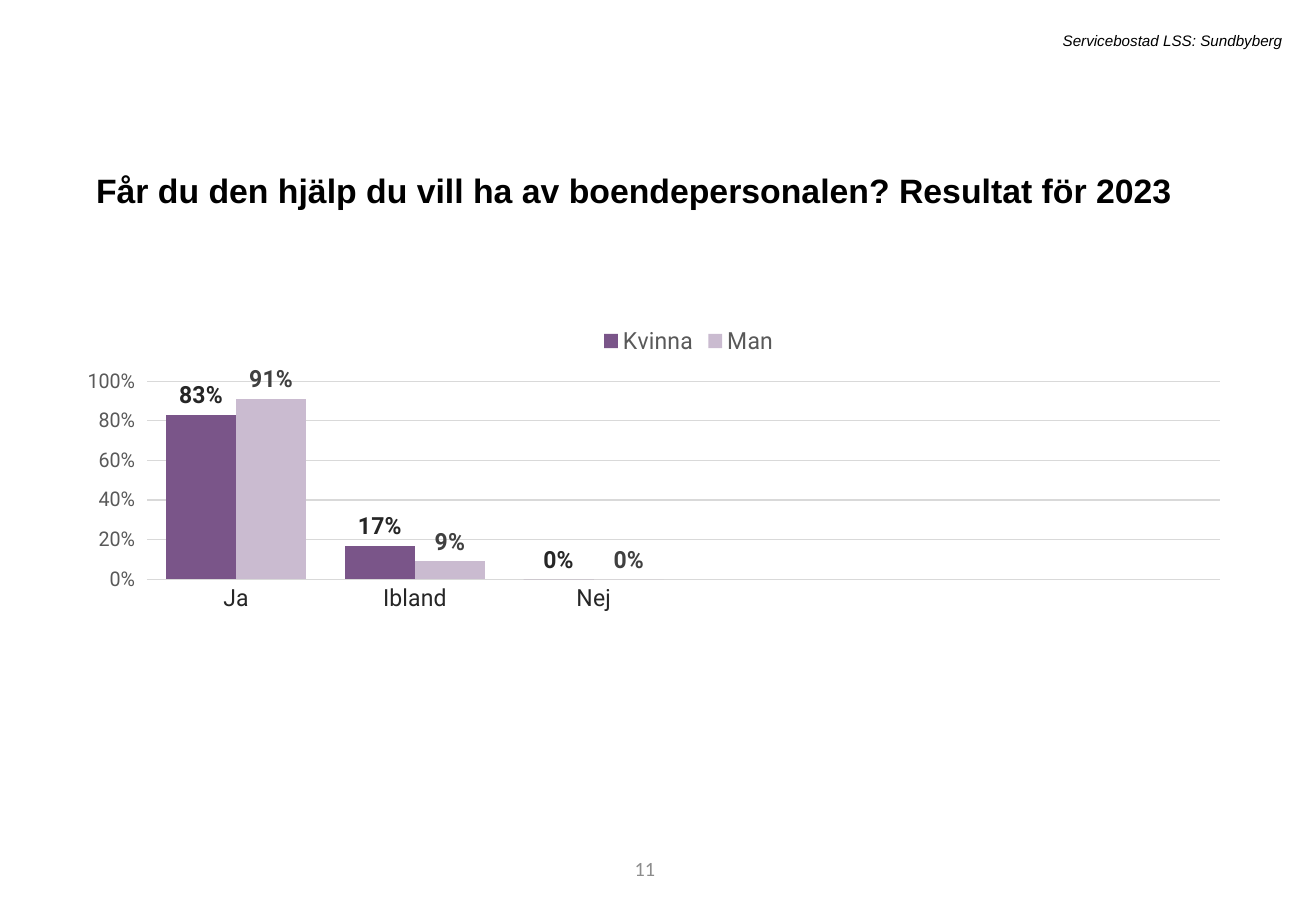
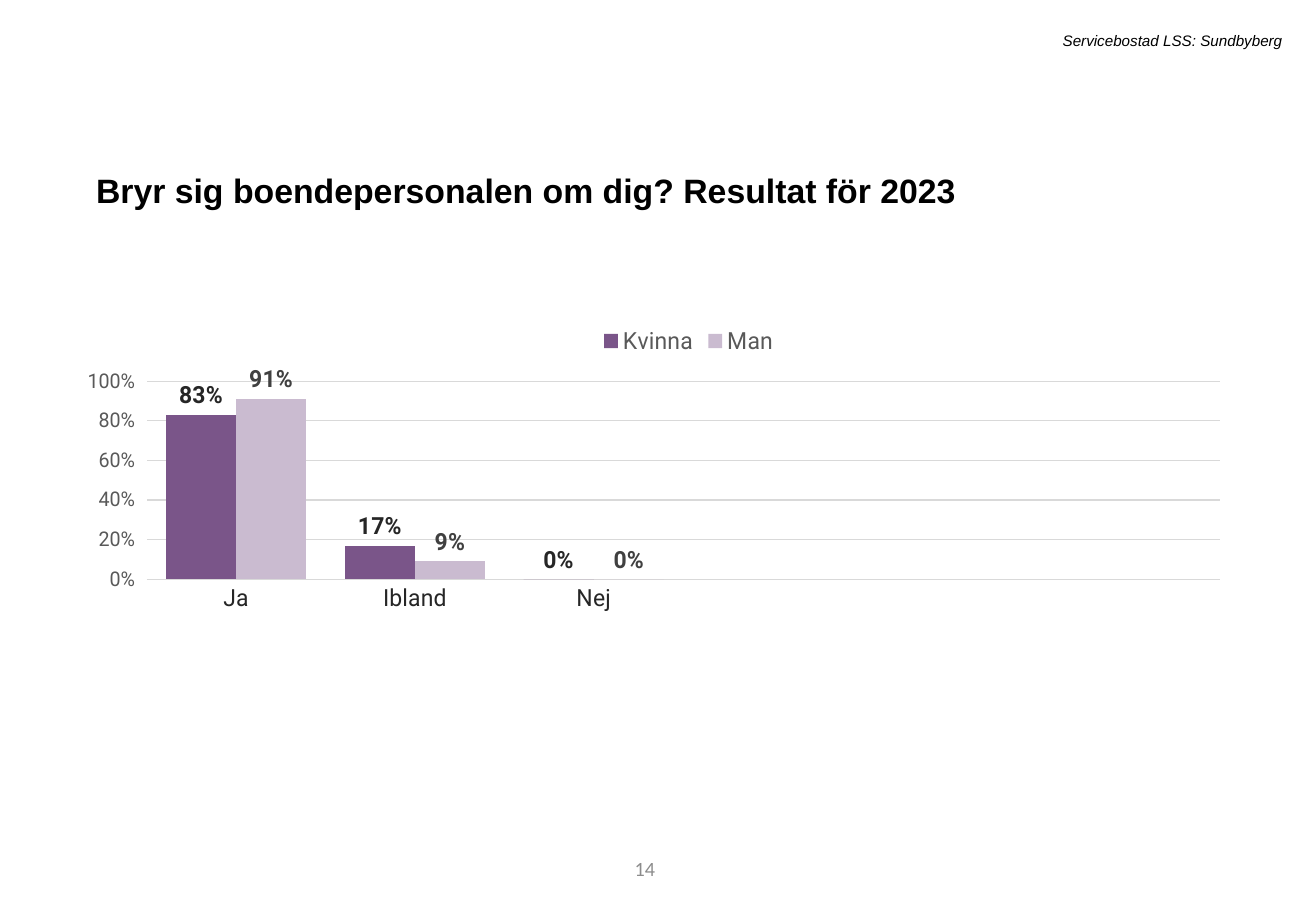
from pptx import Presentation
from pptx.chart.data import CategoryChartData
from pptx.dml.color import RGBColor
from pptx.enum.chart import XL_CHART_TYPE as ChartType
from pptx.enum.chart import XL_LABEL_POSITION as LabelPosition
from pptx.enum.chart import XL_LEGEND_POSITION as LegendPosition
from pptx.enum.chart import XL_TICK_MARK as TickMark
from pptx.enum.text import MSO_ANCHOR as Anchor
from pptx.enum.text import MSO_AUTO_SIZE as AutoSize
from pptx.enum.text import PP_ALIGN as Align
from pptx.oxml import parse_xml
from pptx.oxml.ns import nsdecls
from pptx.util import Inches, Pt

PAGE_WIDTH, PAGE_HEIGHT = 10.83, 7.5
TITLE_ONLY = 5

COLORS = {
    "text": "000000",
    "number": "8C8C8C",
    "axis": "595959",
    "dark": "262626",
    "medium": "404040",
    "grid": "D9D9D9",
    "woman": "7A5589",
    "man": "CABBD0",
}

# Boxes: left, top, width, height in inches
BOXES = {
    "header": (1.79, 0.21, 8.86, 0.25),
    "title": (0.69, 1.28, 9.4, 0.47),
    "chart": (0.72, 2.53, 9.4, 3.95),
    "number": (3.05, 6.95, 2.44, 0.4),
}

# Shares of the chart's box
PLOT_LAYOUT = {"x": 0.025, "y": 0.154, "w": 0.966, "h": 0.413}
LEGEND_LAYOUT = {"x": 0.43, "y": 0.03}

HEADER = "Servicebostad LSS: Sundbyberg"
ANSWERS = ["Ja", "Ibland", "Nej", "", "", ""]
SERIES = [
    ("Kvinna", [0.83, 0.17, 0], "woman", "dark"),
    ("Man", [0.91, 0.09, 0], "man", "medium"),
]
PAGES = [
    ("Får du den hjälp du vill ha av boendepersonalen? Resultat för 2023", "11"),
    ("Bryr sig boendepersonalen om dig? Resultat för 2023", "14"),
]


def rgb(color):
    return RGBColor.from_string(COLORS[color])


def set_values(target, values):
    for name, value in values.items():
        setattr(target, name, value)


def format_font(font, size, color, name="Roboto", **styles):
    set_values(font, {"size": Pt(size), "name": name, **styles})
    font.color.rgb = rgb(color)


def write_text(shape, text, font, para_format, frame_format):
    """Fill a text shape with one formatted paragraph."""
    set_values(shape.text_frame, {"word_wrap": True, **frame_format})
    para = shape.text_frame.paragraphs[0]
    set_values(para, para_format)
    span = para.add_run()
    span.text = text
    format_font(span.font, **font)


def add_text(page, box, *content):
    write_text(page.shapes.add_textbox(*map(Inches, box)), *content)


def add_title(page, box, text):
    title = page.shapes.title
    set_values(title, dict(zip(("left", "top", "width", "height"), map(Inches, box))))
    write_text(
        title, text,
        {"size": 20, "color": "text", "name": "Arial", "bold": True},
        {"alignment": Align.LEFT, "line_spacing": 1.2, "space_before": Pt(10)},
        {"vertical_anchor": Anchor.TOP, "auto_size": AutoSize.SHAPE_TO_FIT_TEXT},
    )


def manual_layout(shares, inner=False):
    target = '<c:layoutTarget val="inner"/>' if inner else ""
    modes = "".join(f'<c:{key}Mode val="edge"/>' for key in "xy")
    sizes = "".join(f'<c:{key} val="{share}"/>' for key, share in shares.items())
    return parse_xml(
        f'<c:layout {nsdecls("c")}><c:manualLayout>{target}{modes}{sizes}'
        "</c:manualLayout></c:layout>"
    )


def place_chart_parts(chart):
    """Set the plot area and the legend at fixed shares of the chart."""
    plot_area = chart.element.xpath("c:chart/c:plotArea")[0]
    legend = chart.element.xpath("c:chart/c:legend")[0]
    for old in plot_area.xpath("c:layout") + legend.xpath("c:layout"):
        old.getparent().remove(old)
    plot_area.insert(0, manual_layout(PLOT_LAYOUT, inner=True))
    legend.insert(1, manual_layout(LEGEND_LAYOUT))


def format_line(line, color, width=0.75):
    line.color.rgb = rgb(color)
    line.width = Pt(width)


def add_answer_chart(page, box):
    data = CategoryChartData(number_format="0%")
    data.categories = ANSWERS
    for name, values, *_ in SERIES:
        data.add_series(name, values + [None] * (len(ANSWERS) - len(values)))
    chart = page.shapes.add_chart(
        ChartType.COLUMN_CLUSTERED, *map(Inches, box), data
    ).chart
    format_font(chart.font, 10, "text")

    # Legend
    chart.has_title = False
    chart.has_legend = True
    set_values(chart.legend, {"position": LegendPosition.TOP, "include_in_layout": False})
    format_font(chart.legend.font, 14, "axis")

    # Axes
    answers, shares = chart.category_axis, chart.value_axis
    answers.major_tick_mark = TickMark.NONE
    format_font(answers.tick_labels.font, 14, "dark")
    format_line(answers.format.line, "grid")
    set_values(shares, {
        "minimum_scale": 0, "maximum_scale": 1, "major_unit": 0.2,
        "major_tick_mark": TickMark.OUTSIDE, "has_major_gridlines": True,
    })
    set_values(shares.tick_labels, {"number_format": "0%", "number_format_is_linked": False})
    format_font(shares.tick_labels.font, 12, "axis")
    shares.format.line.fill.background()
    format_line(shares.major_gridlines.format.line, "grid")

    # Columns and their labels
    plot = chart.plots[0]
    set_values(plot, {"gap_width": 55, "overlap": 0, "vary_by_categories": False})
    for series, (_, _, fill, label) in zip(plot.series, SERIES):
        series.format.fill.solid()
        series.format.fill.fore_color.rgb = rgb(fill)
        labels = series.data_labels
        set_values(labels, {
            "show_value": True, "position": LabelPosition.OUTSIDE_END,
            "number_format": "0%", "number_format_is_linked": False,
        })
        format_font(labels.font, 14, label, bold=True)
    place_chart_parts(chart)


def add_result_page(deck, title, number):
    page = deck.slides.add_slide(deck.slide_layouts[TITLE_ONLY])
    right = {"alignment": Align.RIGHT}
    add_text(page, BOXES["number"], number,
             {"size": 12, "color": "number", "name": "Calibri"},
             right, {"vertical_anchor": Anchor.MIDDLE})
    add_answer_chart(page, BOXES["chart"])
    add_title(page, BOXES["title"], title)
    add_text(page, BOXES["header"], HEADER,
             {"size": 9, "color": "text", "name": "Arial", "italic": True},
             right, {"auto_size": AutoSize.SHAPE_TO_FIT_TEXT})


def main():
    deck = Presentation()
    deck.slide_width, deck.slide_height = Inches(PAGE_WIDTH), Inches(PAGE_HEIGHT)
    for title, number in PAGES:
        add_result_page(deck, title, number)
    deck.save("out.pptx")


if __name__ == "__main__":
    main()
